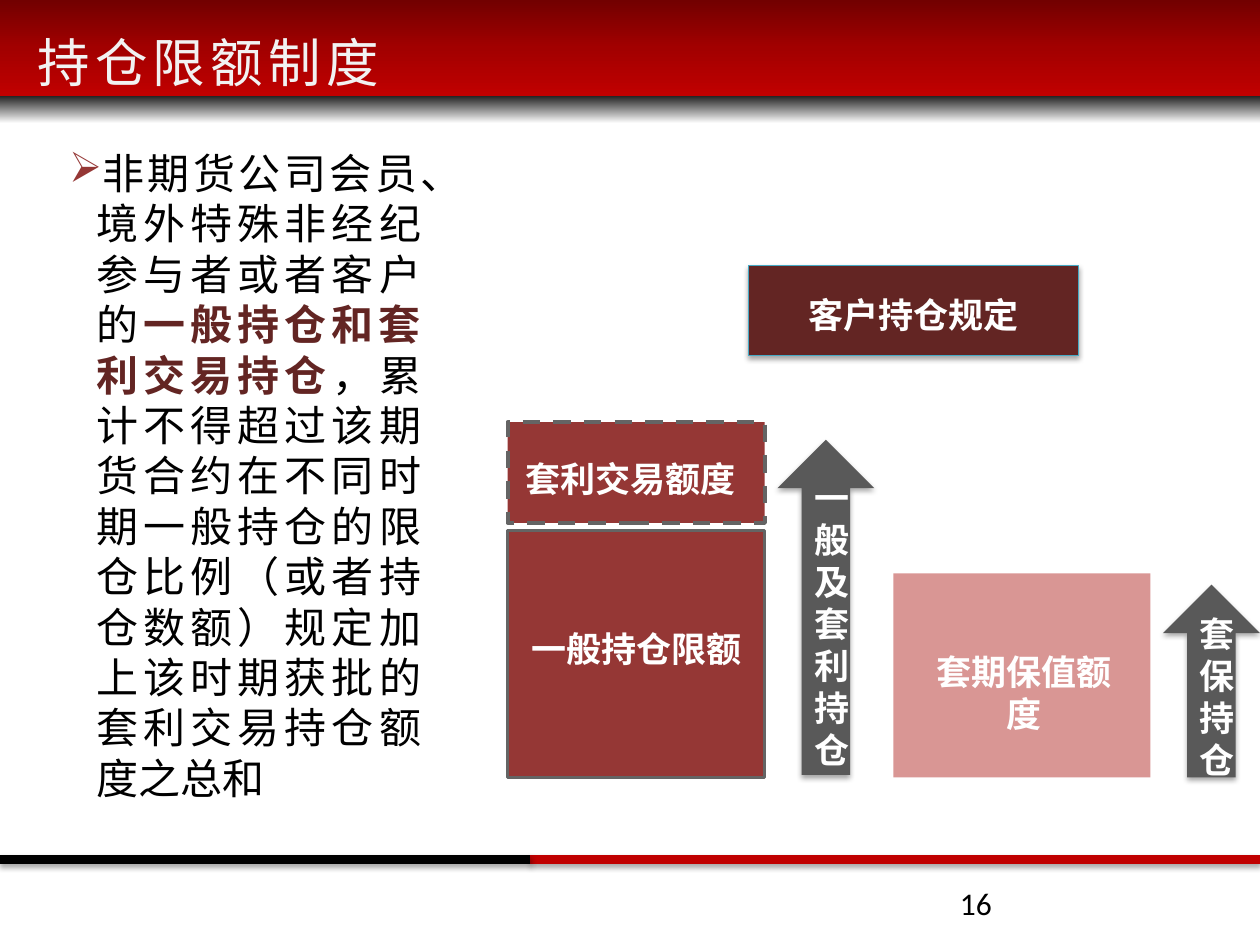
"""Build the slide on position limits."""
from lxml.etree import SubElement
from pptx import Presentation
from pptx.dml.color import RGBColor
from pptx.enum.dml import MSO_LINE
from pptx.enum.shapes import MSO_CONNECTOR, MSO_SHAPE
from pptx.enum.text import MSO_ANCHOR, PP_ALIGN
from pptx.oxml.ns import qn
from pptx.util import Inches, Pt

COLORS = {
    "black": "000000", "white": "FFFFFF", "title": "F2F2F2", "red": "C00000",
    "mid_red": "A20000", "deep_red": "720000", "soot": "202020",
    "maroon": "632523", "brick": "953735", "rose": "D99694",
    "gray": "595959", "edge": "646464", "teal": "46AAC5",
}
CJK, LATIN = "Noto Sans CJK SC", "Calibri"
WIDTH, HEIGHT = 10, 7.5
COLUMN, ARROW = 0.204 * WIDTH, 0.077 * WIDTH
LEFT, RIGHT = 0.403 * WIDTH, 0.709 * WIDTH
BASE = 6.17
HEADER, FOOTER, SPLIT = 0.76, 6.82, 0.421 * WIDTH

TITLE = "持仓限额制度"
BODY = [
    ("非期货公司会员、境外特殊非经纪参与者或者客户的", "black", False),
    ("一般持仓和套利交易持仓", "maroon", True),
    ("，累计不得超过该期货合约在不同时期一般持仓的限仓比例（或者持仓数额）规定"
     "加上该时期获批的套利交易持仓额度之总和", "black", False),
]
BANDS = [
    (0, HEADER, [(0, "deep_red"), (50, "mid_red"), (100, "red")]),
    (HEADER, 0.22, [(0, "soot"), (100, "white")]),
]
RULES = [(SPLIT, WIDTH, "red"), (0, SPLIT, "black")]
BLOCKS = [
    (LEFT, 4.15, COLUMN, 0.8, "brick", ("edge", 2.5, MSO_LINE.DASH)),
    (LEFT, BASE, COLUMN, 1.96, "brick", ("edge", 2, None)),
    (RIGHT, BASE, COLUMN, 1.62, "rose", None),
]
LABELS = [
    ("套利交易额度", LEFT, 3.55, 1.95, 0.45),
    ("一般持仓限额", LEFT, 4.9, COLUMN, 0.45),
    ("套期保值额度", 7.21, 5.08, 1.84, 0.77),
]
ARROWS = [("一般及套利持仓", 6.17, 6.15, 2.66), ("套保持仓", WIDTH - ARROW, BASE, 1.53)]


def rgb(name):
    return RGBColor.from_string(COLORS[name])


def add_shadow(shape):
    effects = shape._element.spPr.get_or_add_effectLst() if hasattr(
        shape._element.spPr, "get_or_add_effectLst") else SubElement(
        shape._element.spPr, qn("a:effectLst"))
    outer = SubElement(effects, qn("a:outerShdw"), blurRad=str(Pt(3.1)),
                       dist=str(Pt(1.8)), dir="5400000", rotWithShape="0")
    tint = SubElement(outer, qn("a:srgbClr"), val=COLORS["black"])
    SubElement(tint, qn("a:alpha"), val="35000")


def add_block(page, kind, left, top, width, height, fill=None, line=None):
    shape = page.shapes.add_shape(kind, *map(Inches, (left, top, width, height)))
    shape.shadow.inherit = False
    if fill:
        shape.fill.solid()
        shape.fill.fore_color.rgb = rgb(fill)
    if line:
        color, weight, dash = line
        shape.line.color.rgb = rgb(color)
        shape.line.width = Pt(weight)
        if dash:
            shape.line.dash_style = dash
    else:
        shape.line.fill.background()
    return shape


def add_band(page, top, height, stops):
    band = add_block(page, MSO_SHAPE.RECTANGLE, 0, top, WIDTH, height)
    band.fill.gradient()
    band.fill.gradient_angle = 270
    stop_list = band._element.spPr.find(".//" + qn("a:gsLst"))
    for stop in list(stop_list):
        stop_list.remove(stop)
    for share, color in stops:
        stop = SubElement(stop_list, qn("a:gs"), pos=str(share * 1000))
        SubElement(stop, qn("a:srgbClr"), val=COLORS[color])


def add_rule(page, start, end, color):
    rule = page.shapes.add_connector(
        MSO_CONNECTOR.STRAIGHT, *map(Inches, (start, FOOTER, end, FOOTER)))
    rule.line.color.rgb = rgb(color)
    rule.line.width = Pt(5)
    add_shadow(rule)


def add_box(page, left, top, width, height):
    return page.shapes.add_textbox(*map(Inches, (left, top, width, height)))


def write(shape, runs, size, font=CJK, align=PP_ALIGN.LEFT, indent=None,
          bullet=None, spacing=0):
    frame = shape.text_frame
    frame.word_wrap = True
    if font == CJK:
        frame.margin_top, frame.margin_bottom = Inches(0.08), Inches(0.02)
    para = frame.paragraphs[0]
    para.alignment = align
    if font == CJK:
        para.line_spacing = Pt(1.2 * size)
    props = para._p.get_or_add_pPr()
    if indent:
        for key, value in zip(("marL", "indent"), indent):
            props.set(key, str(Inches(value)))
    if bullet:
        mark, color = bullet
        tint = SubElement(props, qn("a:buClr"))
        SubElement(tint, qn("a:srgbClr"), val=COLORS[color])
        SubElement(props, qn("a:buChar"), char=mark)
    para.font.size, para.font.name = Pt(size), font
    for text, color, bold in runs:
        span = para.add_run()
        span.text = text
        span.font.size, span.font.name = Pt(size), font
        span.font.bold, span.font.color.rgb = bold, rgb(color)
        run_props = span._r.get_or_add_rPr()
        if font == CJK:
            SubElement(run_props, qn("a:ea"), typeface=font)
        if spacing:
            run_props.set("spc", str(spacing * 100))


def write_label(shape, text):
    write(shape, [(text, "white", True)], 20, align=PP_ALIGN.CENTER)


def add_panel(page, kind, text, *layout):
    panel = add_block(page, kind, *layout)
    panel.text_frame.vertical_anchor = MSO_ANCHOR.MIDDLE
    add_shadow(panel)
    write_label(panel, text)


def main():
    deck = Presentation()
    deck.slide_width, deck.slide_height = Inches(WIDTH), Inches(HEIGHT)
    page = deck.slides.add_slide(deck.slide_layouts[6])
    for band in BANDS:
        add_band(page, *band)
    for rule in RULES:
        add_rule(page, *rule)
    write(add_box(page, 7.52, 6.97, 2.33, 0.4), [("16", "black", False)], 18, LATIN)
    for left, bottom, width, height, fill, line in BLOCKS:
        add_block(page, MSO_SHAPE.RECTANGLE, left, bottom - height, width, height, fill, line)
    for text, *place in LABELS:
        write_label(add_box(page, *place), text)
    add_panel(page, MSO_SHAPE.RECTANGLE, "客户持仓规定", 5.94, 2.11, 2.62, 0.71,
              "maroon", ("teal", 0.75, None))
    for text, left, bottom, height in ARROWS:
        add_panel(page, MSO_SHAPE.UP_ARROW, text, left, bottom - height, ARROW, height, "gray")
    write(add_box(page, 0.2, 0.16, 8.3, 0.84), [(TITLE, "title", False)], 30,
          indent=(0.38, -0.38), spacing=3)
    write(add_box(page, 0, 1.09, 3.44, 5.35), BODY, 24, align=PP_ALIGN.JUSTIFY,
          indent=(0.67, -0.22), bullet=("➢", "brick"))
    deck.save("out.pptx")


if __name__ == "__main__":
    main()
